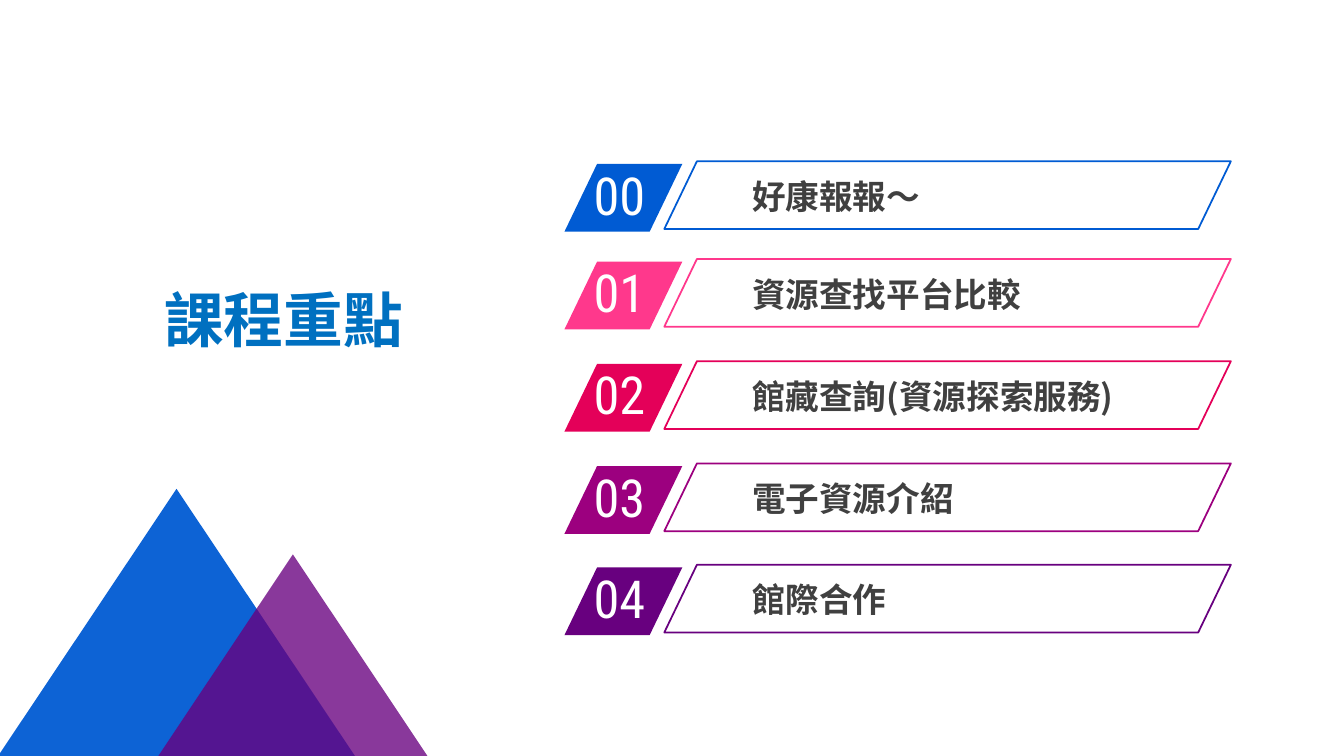
from lxml.etree import SubElement
from pptx import Presentation
from pptx.dml.color import RGBColor
from pptx.enum.shapes import MSO_SHAPE as Shape
from pptx.enum.text import MSO_ANCHOR as Anchor, PP_ALIGN as Align
from pptx.oxml.ns import qn
from pptx.util import Pt

WHITE = RGBColor(0xFF, 0xFF, 0xFF)
CHARCOAL = RGBColor(0x40, 0x40, 0x40)
TITLE_BLUE = RGBColor(0x00, 0x70, 0xC0)
BLUE = RGBColor(0x00, 0x5B, 0xD3)
PINK = RGBColor(0xFF, 0x38, 0x8C)
CRIMSON = RGBColor(0xE4, 0x00, 0x59)
MAGENTA = RGBColor(0x9C, 0x00, 0x7F)
PURPLE = RGBColor(0x68, 0x00, 0x7F)

CJK = "Noto Sans CJK SC"
CONDENSED = "Roboto Condensed"

TOPICS = [
    ("好康報報～", BLUE, 115.2),
    ("資源查找平台比較", PINK, 185),
    ("館藏查詢(資源探索服務)", CRIMSON, 258),
    ("電子資源介紹", MAGENTA, 331),
    ("館際合作", PURPLE, 403.4),
]


def add_text(slide, text, left, top, width, height, *, size, color, font=CJK,
             bold=False, align=Align.LEFT, anchor=Anchor.TOP):
    box = slide.shapes.add_textbox(Pt(left), Pt(top), Pt(width), Pt(height))
    frame = box.text_frame
    frame.word_wrap = True
    frame.vertical_anchor = anchor
    paragraph = frame.paragraphs[0]
    paragraph.alignment = align
    run = paragraph.add_run()
    run.text = text
    run.font.size = Pt(size)
    run.font.bold = bold
    run.font.color.rgb = color
    run.font.name = font
    SubElement(run._r.get_or_add_rPr(), qn("a:ea"), typeface=font)


def add_figure(slide, preset, left, top, width, height, *, fill=None, line=None,
               opacity=100):
    figure = slide.shapes.add_shape(preset, Pt(left), Pt(top), Pt(width), Pt(height))
    figure.shadow.inherit = False
    if fill is None:
        figure.fill.background()
    else:
        figure.fill.solid()
        figure.fill.fore_color.rgb = fill
    if line is None:
        figure.line.fill.background()
    else:
        figure.line.color.rgb = line
        figure.line.width = Pt(1.25)
    if opacity < 100:
        tint = figure._element.spPr.find(qn("a:solidFill"))[0]
        SubElement(tint, qn("a:alpha"), val=str(opacity * 1000))
    return figure


def add_title(slide, left, top, width, height):
    add_text(slide, "課程重點", left, top, width, height, size=42.6, color=TITLE_BLUE,
             bold=True, align=Align.CENTER, anchor=Anchor.MIDDLE)


def add_mountains(slide, left, top, width, height):
    add_figure(slide, Shape.ISOSCELES_TRIANGLE, left, top, width, height,
               fill=BLUE, opacity=95)
    add_figure(slide, Shape.ISOSCELES_TRIANGLE, left + 116.6, top + 46.8,
               width * 0.754, height * 0.754, fill=PURPLE, opacity=78)


def add_topic(slide, number, topic, color, left, top, width, height):
    badge = add_figure(slide, Shape.PARALLELOGRAM, left, top + 1.9, 84.2, height,
                       fill=color)
    frame = add_figure(slide, Shape.PARALLELOGRAM, left + 71.3, top, width - 71.3,
                       height, line=color)
    for slanted in (badge, frame):
        slanted.adjustments[0] = 0.482
    add_text(slide, f"{number:02d}", left + 13.7, top - 2.5, 80.6, 52.6,
             size=37.4, color=WHITE, font=CONDENSED)
    add_text(slide, topic, left + 127, top + 6.8, 340, 36,
             size=24, color=CHARCOAL, bold=True)


def main():
    deck = Presentation()
    deck.slide_width, deck.slide_height = Pt(960), Pt(540)
    slide = deck.slides.add_slide(deck.slide_layouts[6])
    add_title(slide, 84.2, 201.5, 236.9, 52)
    add_mountains(slide, -10, 349.2, 272.2, 203.8)
    for number, (topic, color, top) in enumerate(TOPICS):
        add_topic(slide, number, topic, color, 403.2, top, 476, 48.4)
    deck.save("out.pptx")


if __name__ == "__main__":
    main()
